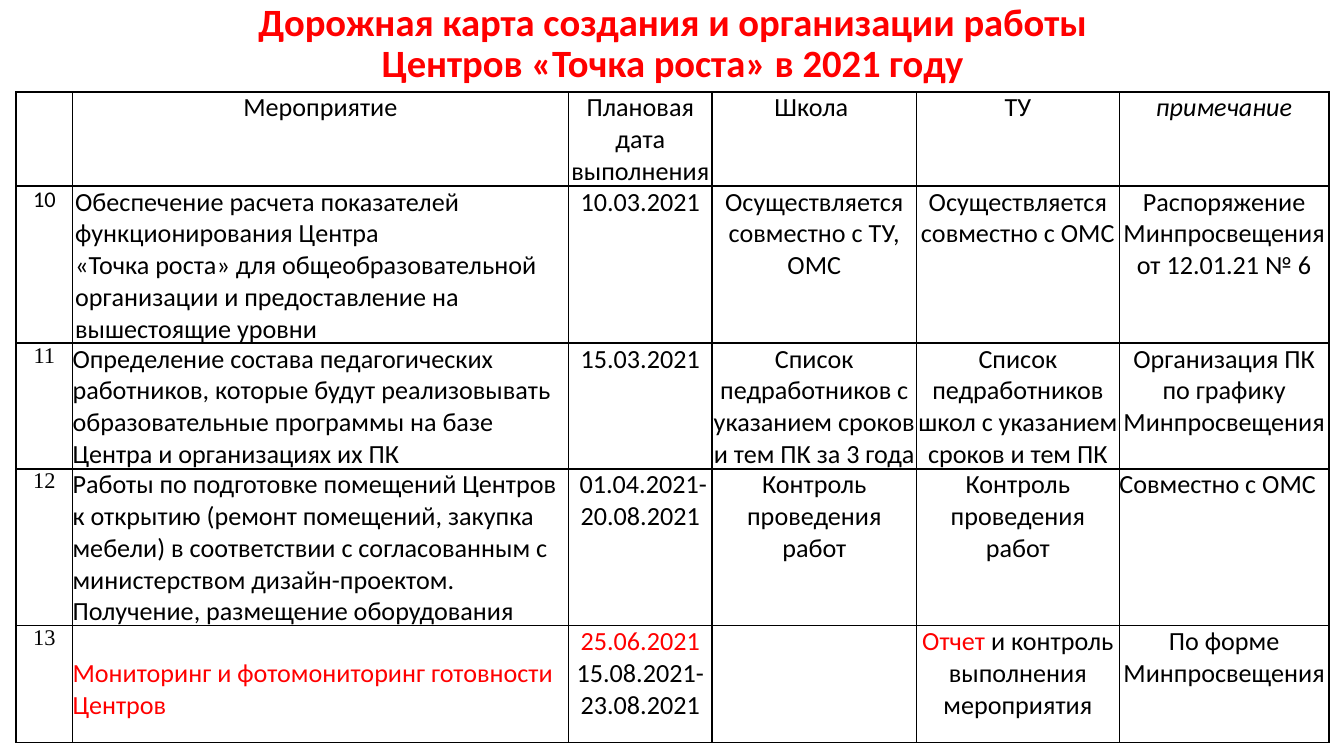
from pptx import Presentation
from pptx.dml.color import RGBColor
from pptx.enum.text import MSO_ANCHOR as Anchor, PP_ALIGN as Align
from pptx.oxml import parse_xml
from pptx.oxml.ns import nsdecls
from pptx.util import Emu, Pt

SCALE = 4572
RED = RGBColor(0xFF, 0, 0)
BLACK = RGBColor(0, 0, 0)
RED_END = "|"

TITLE = ["Дорожная карта создания и организации работы", "Центров «Точка роста» в 2021 году"]
COLUMNS = [84, 738, 214, 304, 302, 312]
ROWS = [134, 222, 178, 222, 174]
TABLE_HEIGHT = 968
PLAN = [
    ["", "Мероприятие", "Плановая дата выполнения", "Школа ", "ТУ", "примечание"],
    ["10",
     "Обеспечение расчета показателей функционирования Центра\n"
     "«Точка роста» для общеобразовательной организации и предоставление на вышестоящие уровни",
     "10.03.2021", "Осуществляется совместно с ТУ, ОМС", "Осуществляется совместно с ОМС",
     " Распоряжение \nМинпросвещения от 12.01.21 № 6"],
    ["11",
     "Определение состава педагогических работников, которые будут реализовывать "
     "образовательные программы на базе Центра и организациях их ПК",
     "15.03.2021", "Список педработников с указанием сроков и тем ПК за 3 года ",
     "Список педработников школ с указанием сроков и тем ПК",
     "Организация ПК по графику Минпросвещения"],
    ["12",
     "Работы по подготовке помещений Центров к открытию (ремонт помещений, закупка мебели) "
     "в соответствии с согласованным с министерством дизайн-проектом. "
     "Получение, размещение оборудования",
     " 01.04.2021-20.08.2021", "Контроль проведения работ", "Контроль проведения работ",
     "Совместно с ОМС"],
    ["13", "Мониторинг и фотомониторинг готовности Центров|",
     "25.06.2021|\n15.08.2021-\n23.08.2021", "", "Отчет |и контроль выполнения мероприятия",
     "По форме Минпросвещения"],
]


def px(length):
    """Convert px to EMU."""
    return Emu(length * SCALE)


class SlideBuilder:
    """Holds the text style and the current slide."""

    font, size, number_size, title_size = "Calibri", 14, 12, 20.7

    def __init__(self, slide):
        """Keep the slide to draw on."""
        self.slide = slide

    def add_span(self, para, text, size, color=BLACK, font=None):
        """Append a formatted run and return it."""
        span = para.add_run()
        span.text = text
        span.font.size = Pt(size)
        span.font.name = font or self.font
        span.font.color.rgb = color
        return span

    def title(self, lines, left, top, width, height):
        """Add a centred bold heading, one line under another."""
        box = self.slide.shapes.add_textbox(px(left), px(top), px(width), px(height))
        frame = box.text_frame
        frame.word_wrap = True
        frame.vertical_anchor = Anchor.MIDDLE
        para = frame.paragraphs[0]
        para.alignment = Align.CENTER
        para.line_spacing = 0.9
        for index, line in enumerate(lines):
            if index:
                para.add_line_break()
            self.add_span(para, line, self.title_size, RED).font.bold = True

    def border(self, cell):
        """Draw a black line on all four sides of a cell."""
        properties = cell._tc.get_or_add_tcPr()
        for index, side in enumerate(("lnL", "lnR", "lnT", "lnB")):
            properties.insert(index, parse_xml(
                f'<a:{side} {nsdecls("a")} w="12700"><a:solidFill>'
                f'<a:srgbClr val="{BLACK}"/></a:solidFill></a:{side}>'))

    def cell(self, cell, text, align, size, font, italic=False):
        """Fill a cell; text before the mark in a paragraph is red."""
        cell.margin_left = cell.margin_right = cell.margin_top = cell.margin_bottom = 0
        cell.fill.background()
        self.border(cell)
        frame = cell.text_frame
        for index, line in enumerate(text.split("\n")):
            para = frame.add_paragraph() if index else frame.paragraphs[0]
            para.alignment = align
            red, mark, black = line.rpartition(RED_END)
            for part, color in ((red, RED), (black, BLACK)):
                if part:
                    self.add_span(para, part, size, color, font).font.italic = italic

    def table(self, plan, left, top, height, columns, rows):
        """Add the plan as a bordered table."""
        frame = self.slide.shapes.add_table(
            len(rows), len(columns), px(left), px(top), px(sum(columns)), px(height))
        table = frame.table
        table.first_row = table.horz_banding = False
        for column, width in zip(table.columns, columns):
            column.width = px(width)
        for row, row_height in zip(table.rows, rows):
            row.height = px(row_height)
        frame.height = px(height)
        last = len(columns) - 1
        for r, texts in enumerate(plan):
            for c, text in enumerate(texts):
                is_left = (r and c == 1) or (r, c) == (3, last)
                self.cell(table.cell(r, c), text,
                          Align.LEFT if is_left else Align.CENTER,
                          self.size if c else self.number_size,
                          "Times New Roman" if c == 0 and r > 1 else self.font,
                          italic=(r, c) == (0, last))
        return table


def main():
    """Build and save the deck."""
    deck = Presentation()
    deck.slide_width, deck.slide_height = px(2000), px(1125)
    page = SlideBuilder(deck.slides.add_slide(deck.slide_layouts[6]))
    page.title(TITLE, 56, 11, 1890, 110)
    table = page.table(PLAN, 24, 137, TABLE_HEIGHT, COLUMNS, ROWS)
    table.cell(1, 1).margin_left = px(4)
    table.cell(4, 1).margin_top = px(48)
    deck.save("out.pptx")


if __name__ == "__main__":
    main()
